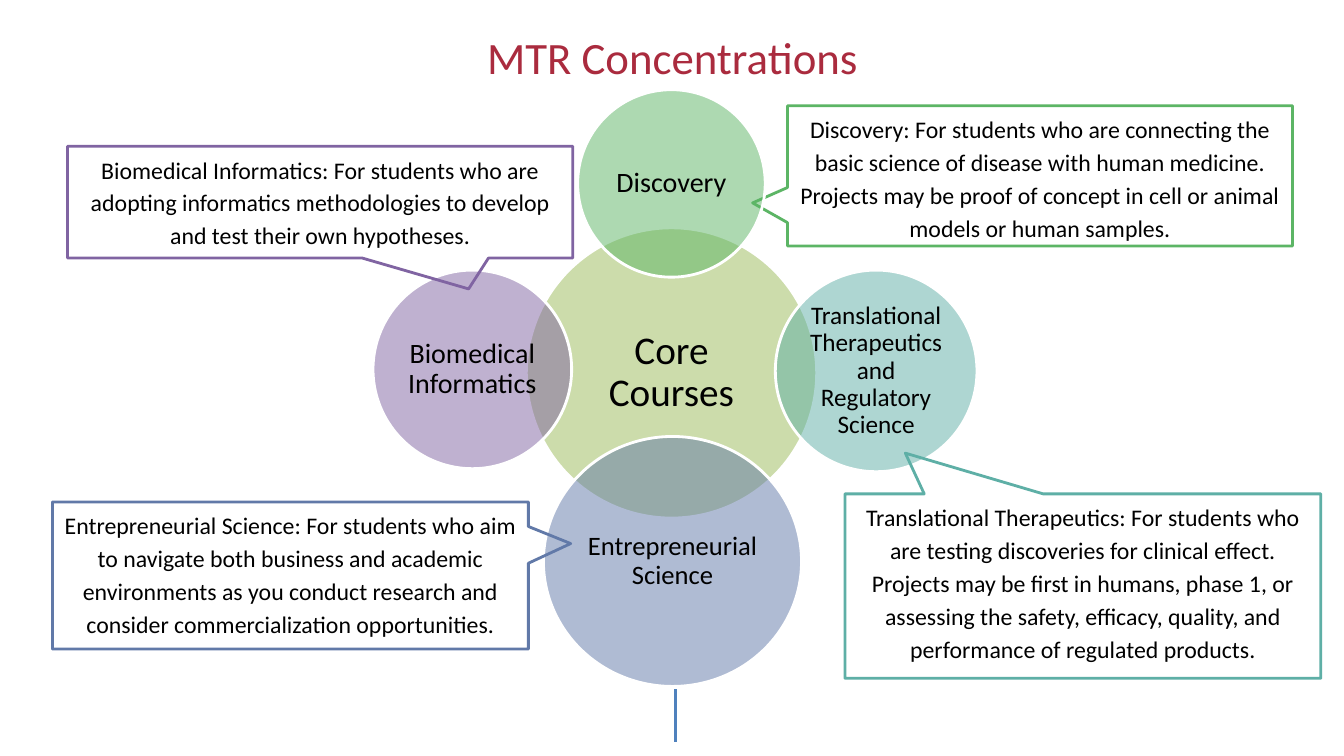
from dataclasses import dataclass

from lxml import etree
from pptx import Presentation
from pptx.dml.color import RGBColor
from pptx.enum.shapes import MSO_CONNECTOR, MSO_SHAPE
from pptx.enum.text import MSO_ANCHOR, PP_ALIGN
from pptx.oxml.ns import qn
from pptx.util import Inches, Pt

OVAL = MSO_SHAPE.OVAL
CALLOUT = MSO_SHAPE.RECTANGULAR_CALLOUT
STRAIGHT = MSO_CONNECTOR.STRAIGHT
CENTER = PP_ALIGN.CENTER
TOP, MIDDLE = MSO_ANCHOR.TOP, MSO_ANCHOR.MIDDLE


@dataclass(frozen=True)
class Theme:
    font: str = "Calibri"
    title: str = "AA2B3E"
    text: str = "000000"
    edge: str = "FFFFFF"
    stem: str = "4F81BD"
    core: str = "9BBB59"
    green: str = "5CB565"
    teal: str = "5EAFA6"
    blue: str = "6179A8"
    purple: str = "8064A2"
    title_size: int = 32
    note_size: int = 17
    line: int = 2
    alpha: int = 50


THEME = Theme()

TITLE = ("MTR Concentrations", (0.67, 0.01, 12, 1.11))
STEM = (6.7, 6.84, 7.36)

# text, box, colour, type size
CIRCLES = [
    ("Core Courses", (5.22, 2.26, 2.88, 2.88), THEME.core, 28),
    ("Discovery", (5.73, 0.89, 1.86, 1.86), THEME.green, 20),
    ("Translational Therapeutics and Regulatory Science",
     (7.69, 2.68, 2, 2), THEME.teal, 18),
    ("Entrepreneurial Science", (5.39, 4.33, 2.56, 2.48), THEME.blue, 19),
    ("Biomedical Informatics", (3.7, 2.68, 1.97, 1.97), THEME.purple, 20),
]

# text, box, colour, tip offset from the centre as a share of the box
BACK_NOTE = (
    "Discovery: For students who are connecting the basic science of disease "
    "with human medicine. Projects may be proof of concept in cell or animal "
    "models or human samples.",
    (7.81, 1.05, 5.01, 1.39), THEME.green, (-0.569, 0.193))
FRONT_NOTES = [
    ("Translational Therapeutics: For students who are testing discoveries "
     "for clinical effect. Projects may be first in humans, phase 1, or "
     "assessing the safety, efficacy, quality, and performance of regulated "
     "products.",
     (8.38, 4.9, 4.72, 1.83), THEME.teal, (-0.373, -0.721)),
    ("Entrepreneurial Science: For students who aim to navigate both business "
     "and academic environments as you conduct research and consider "
     "commercialization opportunities.",
     (0.52, 4.98, 4.72, 1.46), THEME.blue, (0.589, -0.217)),
    ("Biomedical Informatics: For students who are adopting informatics "
     "methodologies to develop and test their own hypotheses.",
     (0.67, 1.45, 5.01, 1.11), THEME.purple, (0.294, 0.776)),
]


def inches(box):
    return [Inches(n) for n in box]


def write(shape, text, size, color=THEME.text, anchor=MIDDLE, pitch=1.0):
    """Put one centred paragraph in the shape."""
    frame = shape.text_frame
    frame.text = text
    frame.word_wrap = True
    frame.vertical_anchor = anchor
    para = frame.paragraphs[0]
    para.alignment = CENTER
    para.line_spacing = pitch
    font = para.runs[0].font
    font.name = THEME.font
    font.size = Pt(size)
    font.color.rgb = RGBColor.from_string(color)
    return frame


def outline(shape, color):
    shape.line.color.rgb = RGBColor.from_string(color)
    shape.line.width = Pt(THEME.line)


def add_shape(slide, kind, box, edge):
    shape = slide.shapes.add_shape(kind, *inches(box))
    shape.shadow.inherit = False
    outline(shape, edge)
    return shape


def add_circle(slide, text, box, color, size):
    oval = add_shape(slide, OVAL, box, THEME.edge)
    oval.fill.solid()
    oval.fill.fore_color.rgb = RGBColor.from_string(color)
    tint = oval.fill._xPr.find(qn("a:solidFill"))[0]
    etree.SubElement(tint, qn("a:alpha"), val=str(THEME.alpha * 1000))
    frame = write(oval, text, size, pitch=0.9)
    frame.margin_left = frame.margin_right = Inches(0.03)
    frame.margin_top = frame.margin_bottom = Inches(0.03)


def add_note(slide, text, box, color, tip):
    note = add_shape(slide, CALLOUT, box, color)
    note.fill.background()
    for i, share in enumerate(tip):
        note.adjustments[i] = share
    write(note, text, THEME.note_size, anchor=TOP, pitch=1.15)


def add_stem(slide, x, top, end):
    stem = slide.shapes.add_connector(STRAIGHT, *inches((x, top, x, end)))
    outline(stem, THEME.stem)
    etree.SubElement(stem._element.spPr, qn("a:effectLst"))


def main():
    deck = Presentation()
    deck.slide_width, deck.slide_height = Inches(13.33), Inches(7.5)
    slide = deck.slides.add_slide(deck.slide_layouts[6])

    add_stem(slide, *STEM)
    add_note(slide, *BACK_NOTE)
    for circle in CIRCLES:
        add_circle(slide, *circle)
    for note in FRONT_NOTES:
        add_note(slide, *note)

    text, box = TITLE
    title = slide.shapes.add_textbox(*inches(box))
    write(title, text, THEME.title_size, THEME.title)
    deck.save("out.pptx")


if __name__ == "__main__":
    main()
